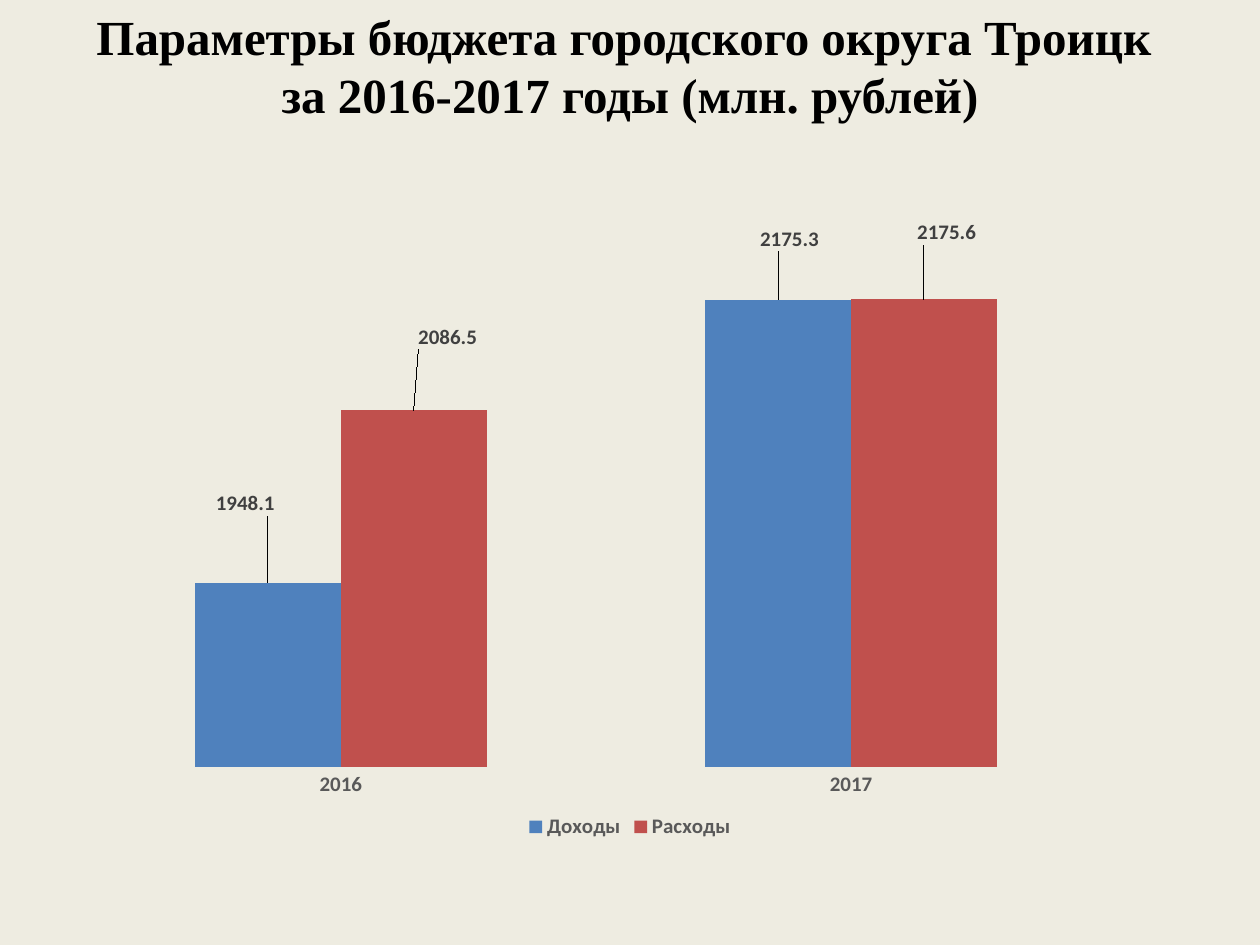
from dataclasses import dataclass

from lxml.etree import SubElement
from pptx import Presentation
from pptx.chart.data import CategoryChartData
from pptx.dml.color import RGBColor
from pptx.enum.chart import (XL_CHART_TYPE, XL_LABEL_POSITION, XL_LEGEND_POSITION,
                             XL_TICK_MARK)
from pptx.enum.text import MSO_ANCHOR, PP_ALIGN
from pptx.oxml.ns import qn
from pptx.util import Inches, Pt


@dataclass(frozen=True)
class Theme:
    background: str = "EEECE1"
    title: str = "000000"
    axis: str = "595959"
    label: str = "404040"
    series: tuple = ("4F81BD", "C0504D")
    title_font: str = "Times New Roman"
    chart_font: str = "Calibri"
    title_size: int = 28
    base_size: int = 10
    chart_size: int = 12


CATEGORIES = ("2016", "2017")
BUDGET = {"Доходы": (1948.1, 2175.3), "Расходы": (2086.5, 2175.6)}
# Label shifts as fractions of the chart size, by series and year
LABEL_SHIFTS = {
    "Доходы": ((-0.02, -0.1), (0.01, -0.07)),
    "Расходы": ((0.03, -0.09), (0.02, -0.08)),
}
PLOT_AREA = {"x": 0.02, "y": 0.045, "w": 0.9, "h": 0.83}


def add_layout(parent, position, values, target=None):
    """Place a chart part by hand; position is its index among the children."""
    for old in parent.findall(qn("c:layout")):
        parent.remove(old)
    layout = SubElement(parent, qn("c:layout"))
    parent.insert(position, layout)
    manual = SubElement(layout, qn("c:manualLayout"))
    if target:
        SubElement(manual, qn("c:layoutTarget")).set("val", target)
        for mode in ("xMode", "yMode"):
            SubElement(manual, qn(f"c:{mode}")).set("val", "edge")
    for name, value in values.items():
        SubElement(manual, qn(f"c:{name}")).set("val", str(value))


class SlideBuilder:
    def __init__(self, slide, theme):
        self.slide = slide
        self.theme = theme
        fill = slide.background.fill
        fill.solid()
        fill.fore_color.rgb = RGBColor.from_string(theme.background)

    def style(self, font, name, size, color, bold=True):
        font.name = name
        font.size = Pt(size)
        font.bold = bold
        font.color.rgb = RGBColor.from_string(color)

    def style_chart_text(self, font, color):
        self.style(font, self.theme.chart_font, self.theme.chart_size, color)

    def title(self, text, left, top, width, height):
        box = self.slide.shapes.add_textbox(
            Inches(left), Inches(top), Inches(width), Inches(height))
        frame = box.text_frame
        frame.word_wrap = True
        frame.vertical_anchor = MSO_ANCHOR.MIDDLE
        frame.text = text
        para = frame.paragraphs[0]
        para.alignment = PP_ALIGN.CENTER
        for span in para.runs:
            self.style(span.font, self.theme.title_font,
                       self.theme.title_size, self.theme.title)

    def column_chart(self, left, top, width, height):
        data = CategoryChartData()
        data.categories = CATEGORIES
        for name, values in BUDGET.items():
            data.add_series(name, values)
        chart = self.slide.shapes.add_chart(
            XL_CHART_TYPE.COLUMN_CLUSTERED, Inches(left), Inches(top),
            Inches(width), Inches(height), data).chart
        self.style(chart.font, self.theme.chart_font, self.theme.base_size,
                   self.theme.title, bold=False)
        chart.has_title = False
        self.axes(chart)
        self.legend(chart)

        plot = chart.plots[0]
        plot.gap_width = 150
        plot.overlap = 0
        plot.vary_by_categories = False
        add_layout(chart._chartSpace.chart.plotArea, 0, PLOT_AREA, "inner")
        for series, color in zip(plot.series, self.theme.series):
            series.format.fill.solid()
            series.format.fill.fore_color.rgb = RGBColor.from_string(color)
            self.labels(series)

    def axes(self, chart):
        years = chart.category_axis
        years.major_tick_mark = years.minor_tick_mark = XL_TICK_MARK.NONE
        years.format.line.fill.background()
        self.style_chart_text(years.tick_labels.font, self.theme.axis)
        amounts = chart.value_axis
        amounts.visible = False
        amounts.has_major_gridlines = False
        amounts.minimum_scale = 1800
        amounts.maximum_scale = 2211

    def legend(self, chart):
        chart.has_legend = True
        chart.legend.position = XL_LEGEND_POSITION.BOTTOM
        chart.legend.include_in_layout = False
        self.style_chart_text(chart.legend.font, self.theme.axis)

    def labels(self, series):
        labels = series.data_labels
        labels.show_value = True
        labels.position = XL_LABEL_POSITION.OUTSIDE_END
        self.style_chart_text(labels.font, self.theme.label)
        for index in range(len(CATEGORIES)):
            label = series.points[index].data_label
            label.position = XL_LABEL_POSITION.OUTSIDE_END
            self.style_chart_text(label.font, self.theme.label)
        elements = labels._element.findall(qn("c:dLbl"))
        for element, (x, y) in zip(elements, LABEL_SHIFTS[series.name]):
            add_layout(element, 1, {"x": x, "y": y})


def main():
    deck = Presentation()
    deck.slide_width, deck.slide_height = Inches(10), Inches(7.5)
    builder = SlideBuilder(deck.slides.add_slide(deck.slide_layouts[6]), Theme())
    builder.title("Параметры бюджета городского округа Троицк \v"
                  "за 2016-2017 годы (млн. рублей)", 0, -0.11, 10, 1.25)
    builder.column_chart(0.5, 1.75, 9, 4.95)
    deck.save("out.pptx")


if __name__ == "__main__":
    main()
